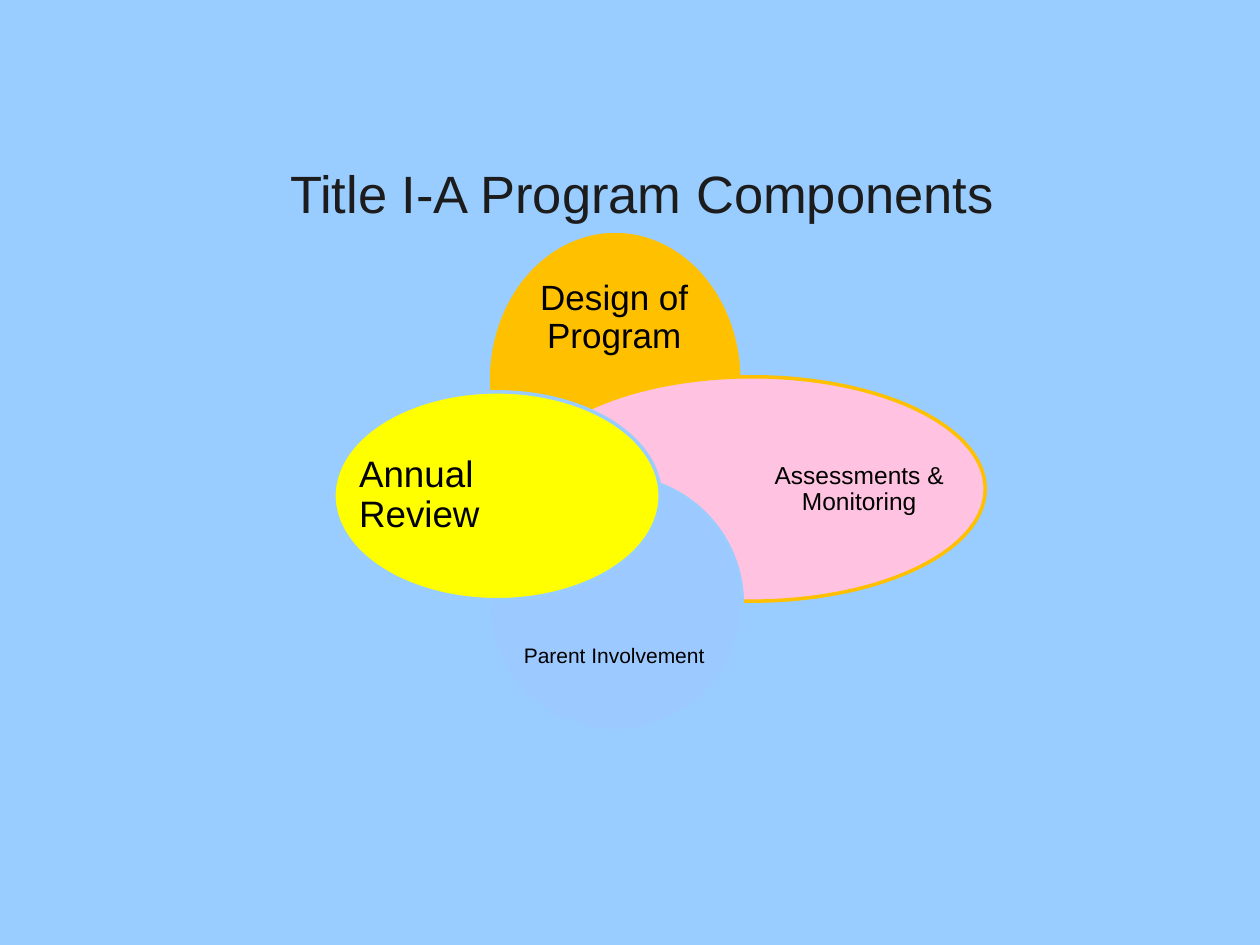
"""Build the Title I-A program components slide with four overlapping ellipses."""
from dataclasses import dataclass

from pptx import Presentation
from pptx.dml.color import RGBColor
from pptx.enum.shapes import MSO_SHAPE as Shape
from pptx.enum.text import MSO_ANCHOR as Anchor, PP_ALIGN as Align
from pptx.util import Pt


@dataclass(frozen=True)
class Theme:
    font: str = "Arial"
    sky: str = "99CCFF"
    ink: str = "000000"
    heading: str = "1C1C1C"
    amber: str = "FFC000"
    pink: str = "FFC2E0"
    blue: str = "9CC9FF"
    yellow: str = "FFFF00"
    title_size: int = 30
    review_size: int = 21
    design_size: int = 20
    assess_size: int = 14
    parent_size: int = 12


T = Theme()


def add_text(tf, text, size, color, align):
    tf.word_wrap = True
    tf.vertical_anchor = Anchor.MIDDLE
    p = tf.paragraphs[0]
    p.alignment = align
    r = p.add_run()
    r.text = text
    r.font.name = T.font
    r.font.size = Pt(size)
    r.font.color.rgb = RGBColor.from_string(color)
    return p


prs = Presentation()
prs.slide_width, prs.slide_height = Pt(720), Pt(540)
s = prs.slides.add_slide(prs.slide_layouts[5])
s.background.fill.solid()
s.background.fill.fore_color.rgb = RGBColor.from_string(T.sky)

title = s.shapes.title
title.left, title.top, title.width, title.height = Pt(126), Pt(81), Pt(482), Pt(58)
add_text(title.text_frame, "Title I-A Program Components", T.title_size, T.heading, Align.CENTER)

components = [
    ("Design of Program", T.design_size, Align.CENTER, T.amber, T.sky,
     (278.9, 132, 145.3, 170), (295.2, 154.8, 111.6, 54)),
    ("Assessments & Monitoring", T.assess_size, Align.CENTER, T.pink, T.amber,
     (296.6, 215.3, 266.4, 128.2), (439.9, 230.4, 102.2, 98.6)),
    ("Parent Involvement", T.parent_size, Align.CENTER, T.blue, T.sky,
     (278.9, 272.2, 145.3, 145.3), (295.2, 352.1, 111.6, 46.1)),
    ("Annual Review", T.review_size, Align.JUSTIFY, T.yellow, T.sky,
     (190.8, 223.9, 186.5, 118.8), (205.2, 237.6, 72, 91.4)),
]

for label, size, align, fill, line, oval_box, text_box in components:
    oval = s.shapes.add_shape(Shape.OVAL, *map(Pt, oval_box))
    oval.shadow.inherit = False
    oval.fill.solid()
    oval.fill.fore_color.rgb = RGBColor.from_string(fill)
    oval.line.color.rgb = RGBColor.from_string(line)
    oval.line.width = Pt(2)

    tf = s.shapes.add_textbox(*map(Pt, text_box)).text_frame
    tf.margin_left = tf.margin_right = tf.margin_top = tf.margin_bottom = 0
    p = add_text(tf, label, size, T.ink, align)
    p.line_spacing = 0.9

prs.save("out.pptx")
